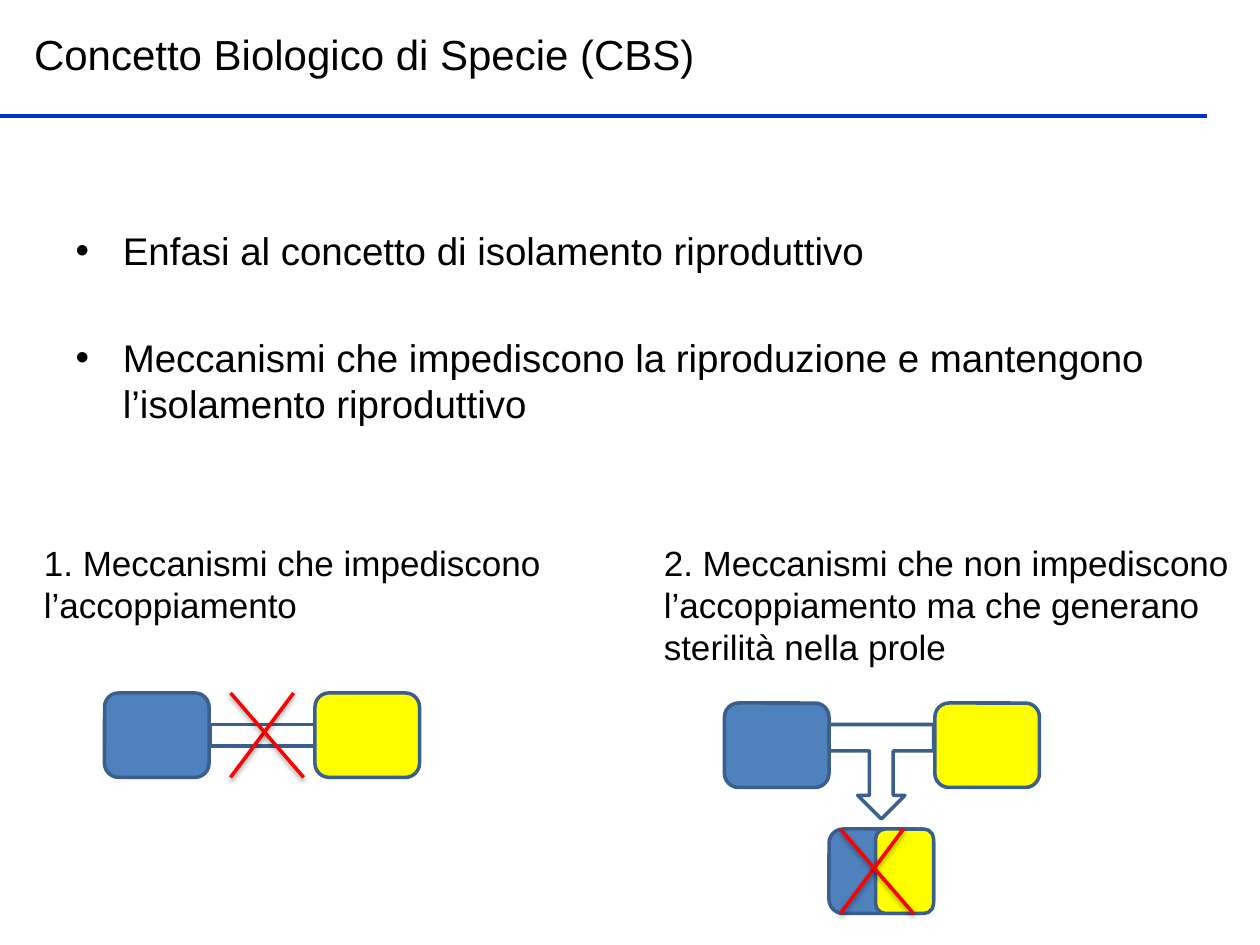
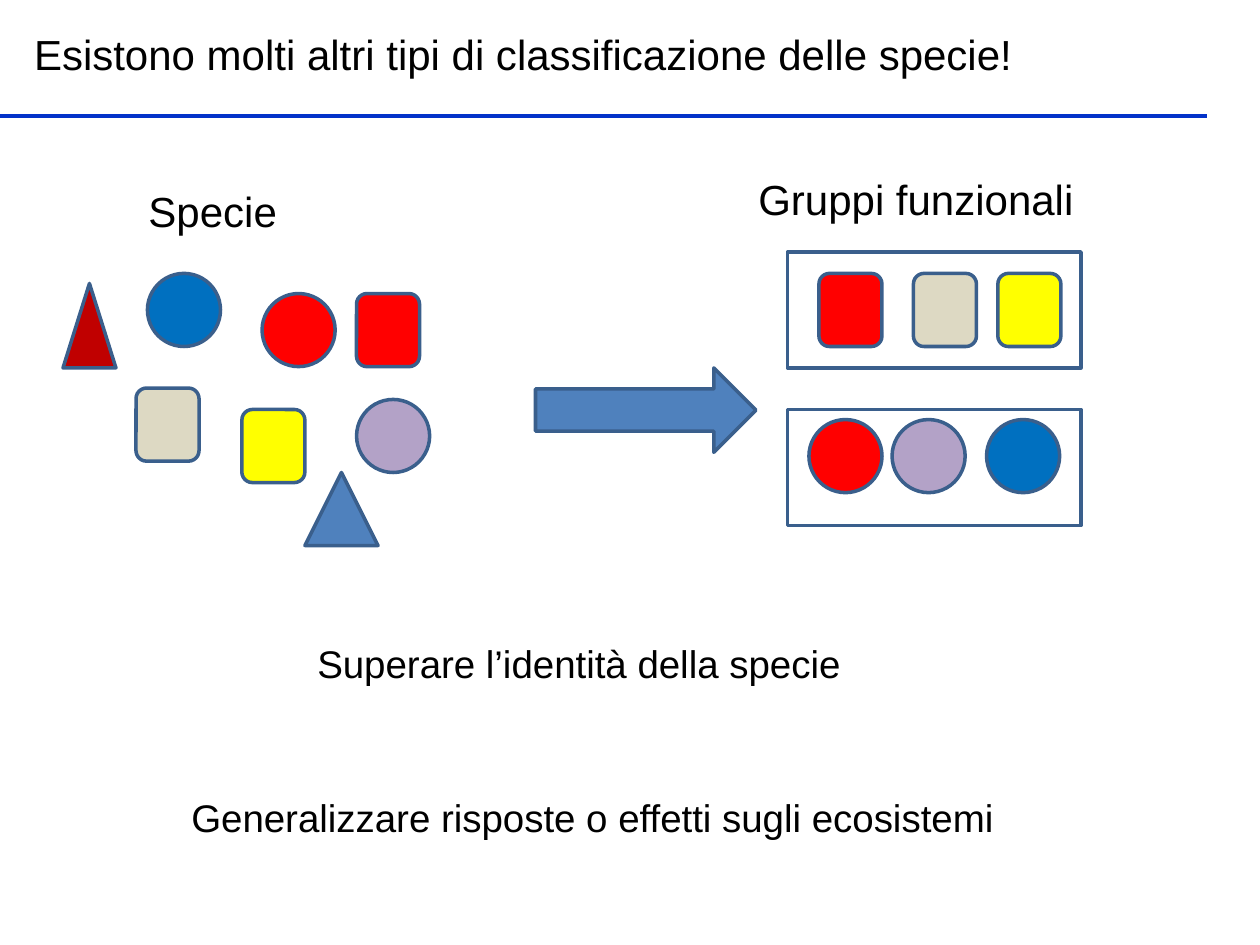
from dataclasses import dataclass
from typing import Optional

from lxml.etree import SubElement
from pptx import Presentation
from pptx.dml.color import RGBColor
from pptx.enum.shapes import MSO_CONNECTOR, MSO_SHAPE
from pptx.enum.text import MSO_ANCHOR, MSO_AUTO_SIZE, PP_ALIGN
from pptx.oxml.ns import qn
from pptx.util import Inches, Pt

COLORS = {
    "text": "000000",
    "rule": "0332C9",
    "outline": "3A5F8C",
    "steel": "4F81BD",
    "yellow": "FFFF00",
    "red": "FF0000",
    "dark red": "C00000",
    "blue": "0070C0",
    "sand": "DDD9C3",
    "lilac": "B3A2C7",
}
LINE_WIDTH = Pt(2)
FRAME_FORMAT = {"word_wrap": True, "auto_size": MSO_AUTO_SIZE.NONE}
MIDDLE_FRAME = {**FRAME_FORMAT, "vertical_anchor": MSO_ANCHOR.MIDDLE}
TOP_FRAME = {**FRAME_FORMAT, "vertical_anchor": MSO_ANCHOR.TOP}
PARAGRAPH_FORMAT = {"alignment": PP_ALIGN.LEFT}
SHADOW = {"blurRad": Pt(3.1), "dist": Pt(1.6), "dir": 90 * 60000, "rotWithShape": 0}
SHADOW_OPACITY = 38000


@dataclass(frozen=True)
class Box:
    left: float
    top: float
    width: float
    height: float

    def lengths(self) -> tuple:
        return tuple(Inches(v) for v in (self.left, self.top, self.width, self.height))


@dataclass(frozen=True)
class Label:
    text: str
    box: Box
    size: int
    frame: dict


@dataclass(frozen=True)
class Figure:
    kind: MSO_SHAPE
    box: Box
    fill: Optional[str] = None
    adjustments: tuple = ()


@dataclass(frozen=True)
class Species:
    kind: MSO_SHAPE
    width: float
    fill: str
    scattered: tuple
    grouped: tuple

    def figure(self, position: tuple) -> Figure:
        return Figure(self.kind, Box(*position, self.width, 0.58), self.fill)


TITLE_BOX = Box(0.17, 0.18, 8.5, 0.5)
BODY_BOX = Box(0.5, 1.75, 9, 1.75)
BULLETS = (
    ("Enfasi al concetto di isolamento riproduttivo", 4.4),
    ("Meccanismi che impediscono la riproduzione e mantengono l’isolamento riproduttivo", 35),
)
MECHANISM_LABELS = (
    Label("1. Meccanismi che impediscono l’accoppiamento",
          Box(0.25, 4.25, 5, 0.77), 20, TOP_FRAME),
    Label("2. Meccanismi che non impediscono l’accoppiamento ma che generano sterilità nella prole",
          Box(5.17, 4.25, 4.83, 1.11), 20, TOP_FRAME),
)
GROUP_LABELS = (
    Label("Specie", Box(1.08, 1.42, 1.42, 0.5), 24, MIDDLE_FRAME),
    Label("Gruppi funzionali", Box(5.92, 1.33, 3, 0.5), 24, MIDDLE_FRAME),
    Label("Superare l’identità della specie", Box(2.42, 5.03, 4.83, 0.47), 22, TOP_FRAME),
    Label("Generalizzare risposte o effetti sugli ecosistemi",
          Box(1.42, 6.25, 8.5, 0.47), 22, TOP_FRAME),
)
PARENT_WIDTH, PARENT_HEIGHT, PARENT_STEP = 0.83, 0.67, 1.67
SQUARE, CIRCLE = MSO_SHAPE.ROUNDED_RECTANGLE, MSO_SHAPE.OVAL
SQUARE_ROW, CIRCLE_ROW = 2.17, 3.33
SPECIES = (
    Species(SQUARE, 0.5, "sand", (1.08, 3.08), (7.25, SQUARE_ROW)),
    Species(SQUARE, 0.5, "red", (2.83, 2.33), (6.5, SQUARE_ROW)),
    Species(SQUARE, 0.5, "yellow", (1.92, 3.25), (7.92, SQUARE_ROW)),
    Species(CIRCLE, 0.58, "blue", (1.17, 2.17), (7.83, CIRCLE_ROW)),
    Species(CIRCLE, 0.58, "red", (2.08, 2.33), (6.42, CIRCLE_ROW)),
    Species(CIRCLE, 0.58, "lilac", (2.83, 3.17), (7.08, CIRCLE_ROW)),
)
GROUP_FRAMES = tuple(
    Figure(MSO_SHAPE.RECTANGLE, Box(6.25, top, 2.33, 0.92)) for top in (2, 3.25)
)
UNGROUPED = (
    Figure(MSO_SHAPE.ISOSCELES_TRIANGLE, Box(2.42, 3.75, 0.58, 0.58), "steel"),
    Figure(MSO_SHAPE.ISOSCELES_TRIANGLE, Box(0.5, 2.25, 0.42, 0.67), "dark red"),
)
GROUPING_ARROW = Figure(MSO_SHAPE.RIGHT_ARROW, Box(4.25, 2.92, 1.75, 0.67), "steel")


def color(name: str) -> RGBColor:
    return RGBColor.from_string(COLORS[name])


def apply_format(target, values: dict) -> None:
    for name, value in values.items():
        setattr(target, name, value)


def write_paragraph(paragraph, text: str, size: int, **spacing) -> None:
    apply_format(paragraph, {**PARAGRAPH_FORMAT, **spacing})
    run = paragraph.add_run()
    run.text = text
    apply_format(run.font, {"name": "Arial", "size": Pt(size)})
    run.font.color.rgb = color("text")


def place(shape, box: Box) -> None:
    apply_format(shape, dict(zip(("left", "top", "width", "height"), box.lengths())))


def draw_label(slide, label: Label) -> None:
    shape = slide.shapes.add_textbox(*label.box.lengths())
    apply_format(shape.text_frame, label.frame)
    write_paragraph(shape.text_frame.paragraphs[0], label.text, label.size)


def draw_figure(slide, figure: Figure) -> None:
    shape = slide.shapes.add_shape(figure.kind, *figure.box.lengths())
    shape.shadow.inherit = False
    for index, value in enumerate(figure.adjustments):
        shape.adjustments[index] = value
    if figure.fill:
        shape.fill.solid()
        shape.fill.fore_color.rgb = color(figure.fill)
    else:
        shape.fill.background()
    shape.line.color.rgb = color("outline")
    shape.line.width = LINE_WIDTH


def draw_line(slide, start: tuple, end: tuple, color_name: str, shadow: bool = False) -> None:
    points = (Inches(value) for value in (*start, *end))
    connector = slide.shapes.add_connector(MSO_CONNECTOR.STRAIGHT, *points)
    connector.line.color.rgb = color(color_name)
    connector.line.width = LINE_WIDTH
    effects = SubElement(connector._element.spPr, qn("a:effectLst"))
    if shadow:
        attributes = {name: str(int(value)) for name, value in SHADOW.items()}
        outer = SubElement(effects, qn("a:outerShdw"), attributes)
        shade = SubElement(outer, qn("a:srgbClr"), val=COLORS["text"])
        SubElement(shade, qn("a:alpha"), val=str(SHADOW_OPACITY))


def draw_cross(slide, left: float, top: float) -> None:
    bottom = top + PARENT_HEIGHT
    draw_line(slide, (left, bottom), (left + 0.5, top), "red", shadow=True)
    draw_line(slide, (left + 0.58, bottom), (left, top), "red", shadow=True)


def draw_parents(slide, left: float, top: float) -> None:
    for index, fill in enumerate(("steel", "yellow")):
        box = Box(left + index * PARENT_STEP, top, PARENT_WIDTH, PARENT_HEIGHT)
        draw_figure(slide, Figure(SQUARE, box, fill))


def add_titled_slide(presentation, layout_index: int, title: str):
    slide = presentation.slides.add_slide(presentation.slide_layouts[layout_index])
    shape = slide.shapes.title
    place(shape, TITLE_BOX)
    apply_format(shape.text_frame, MIDDLE_FRAME)
    write_paragraph(shape.text_frame.paragraphs[0], title, 24)
    draw_line(slide, (0, 0.92), (9.58, 0.92), "rule")
    return slide


def build_concept_slide(presentation) -> None:
    slide = add_titled_slide(presentation, 1, "Concetto Biologico di Specie (CBS)")
    body = slide.placeholders[1]
    place(body, BODY_BOX)
    frame = body.text_frame
    apply_format(frame, TOP_FRAME)
    for index, (text, space) in enumerate(BULLETS):
        paragraph = frame.add_paragraph() if index else frame.paragraphs[0]
        write_paragraph(paragraph, text, 22, space_before=Pt(space))
    for label in MECHANISM_LABELS:
        draw_label(slide, label)

    draw_figure(slide, Figure(MSO_SHAPE.RECTANGLE, Box(1.67, 5.75, 1, 0.17)))
    draw_parents(slide, 0.83, 5.5)
    draw_cross(slide, 1.83, 5.5)

    draw_parents(slide, 5.75, 5.58)
    offspring = Box(6.58, 6.58, PARENT_WIDTH, PARENT_HEIGHT)
    draw_figure(slide, Figure(SQUARE, offspring, "steel"))
    draw_figure(slide, Figure(MSO_SHAPE.DOWN_ARROW_CALLOUT, Box(6.58, 5.75, PARENT_WIDTH, 0.75),
                              adjustments=(0.25, 0.25, 0.25, 0.28)))
    draw_figure(slide, Figure(SQUARE, Box(6.95, 6.58, 0.46, PARENT_HEIGHT), "yellow"))
    draw_cross(slide, 6.67, 6.58)


def build_groups_slide(presentation) -> None:
    slide = add_titled_slide(
        presentation, 5, "Esistono molti altri tipi di classificazione delle specie!")
    scattered = [species.figure(species.scattered) for species in SPECIES]
    grouped = [species.figure(species.grouped) for species in SPECIES]
    for figure in (*scattered, *grouped, *GROUP_FRAMES, *UNGROUPED, GROUPING_ARROW):
        draw_figure(slide, figure)
    for label in GROUP_LABELS:
        draw_label(slide, label)


def main() -> None:
    presentation = Presentation()
    apply_format(presentation, {"slide_width": Inches(10), "slide_height": Inches(7.5)})
    build_concept_slide(presentation)
    build_groups_slide(presentation)
    presentation.save("out.pptx")


if __name__ == "__main__":
    main()
